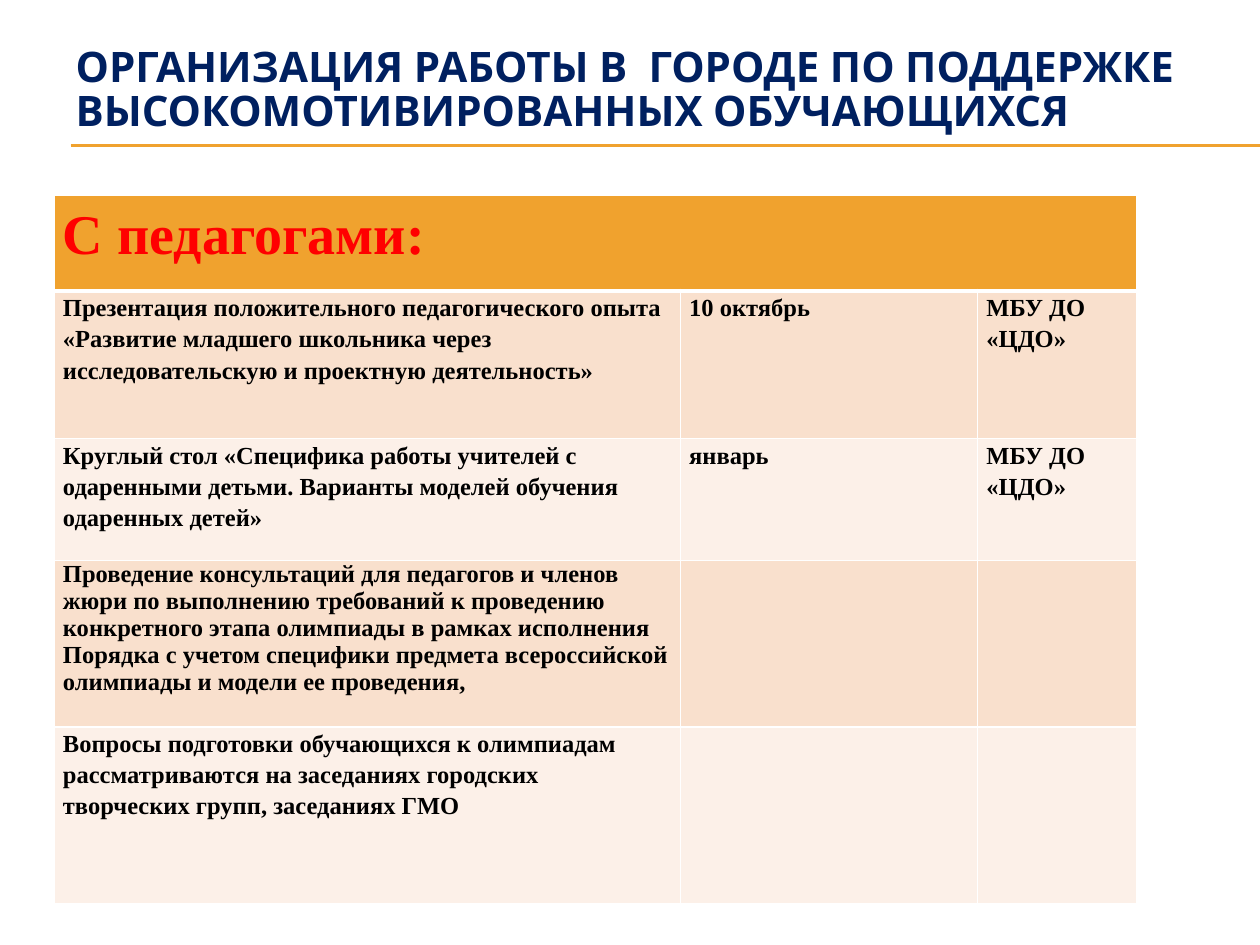
from lxml import etree
from pptx import Presentation
from pptx.dml.color import RGBColor
from pptx.enum.text import MSO_ANCHOR, MSO_AUTO_SIZE, PP_ALIGN
from pptx.oxml import parse_xml
from pptx.oxml.ns import nsdecls, qn
from pptx.util import Inches, Pt

NAVY, ORANGE, RED, BLACK, WHITE = "002060", "F0A22E", "FF0000", "000000", "FFFFFF"
BANDS = ("F9E0CD", "FCF0E8")
COLUMN_WIDTHS = (4.97, 2.36, 1.26)
ROW_HEIGHTS = (0.76, 1.17, 0.97, 1.32, 1.4)
TITLE = "ОРГАНИЗАЦИЯ РАБОТЫ В  ГОРОДЕ ПО ПОДДЕРЖКЕ ВЫСОКОМОТИВИРОВАННЫХ ОБУЧАЮЩИХСЯ"
HEADING = "С педагогами:"
EVENTS = (
    ("Презентация положительного педагогического опыта «Развитие младшего школьника "
     "через исследовательскую и проектную деятельность»", "10 октябрь", "МБУ ДО «ЦДО»", 1.15),
    ("Круглый стол «Специфика работы учителей с одаренными детьми. Варианты моделей "
     "обучения одаренных детей»", "январь", "МБУ ДО «ЦДО»", 1.15),
    ("Проведение консультаций для педагогов и членов жюри по выполнению требований к "
     "проведению конкретного этапа олимпиады в рамках исполнения Порядка с учетом "
     "специфики предмета всероссийской олимпиады и модели ее проведения,", "", "", 1.0),
    ("Вопросы подготовки обучающихся к олимпиадам рассматриваются на заседаниях "
     "городских творческих групп, заседаниях ГМО", "", "", 1.15),
)


def color(hex_value):
    """Turn a hex string into a colour."""
    return RGBColor.from_string(hex_value)


def style(paragraph, face, size, ink, spacing):
    """Format a bold, left-aligned paragraph."""
    font = paragraph.font
    font.name, font.size, font.bold = face, Pt(size), True
    font.color.rgb = color(ink)
    paragraph.line_spacing = spacing
    paragraph.alignment = PP_ALIGN.LEFT


def add_title(slide):
    """Fill and place the title placeholder."""
    title = slide.shapes.title
    title.left, title.top = Inches(0.5), Inches(0.3)
    title.width, title.height = Inches(9), Inches(0.85)
    frame = title.text_frame
    frame.text = TITLE
    frame.word_wrap = True
    frame.auto_size = MSO_AUTO_SIZE.NONE
    frame.vertical_anchor = MSO_ANCHOR.MIDDLE
    style(frame.paragraphs[0], "Karla", 24, NAVY, 0.88)


def add_rule(slide, y):
    """Draw a horizontal rule running to the right edge."""
    rule = slide.shapes.add_connector(1, Inches(0.56), Inches(y), Inches(10), Inches(y))
    rule.line.color.rgb = color(ORANGE)
    rule.line.width = Pt(0.75)
    etree.SubElement(rule._element.spPr, qn("a:effectLst"))


def set_borders(cell, bottom):
    """Give a cell white borders with its own bottom width."""
    properties = cell._tc.get_or_add_tcPr()
    for index, (side, width) in enumerate(zip("LRTB", (1, 1, 1, bottom))):
        properties.insert(index, parse_xml(
            f'<a:ln{side} {nsdecls("a")} w="{Pt(width)}"><a:solidFill>'
            f'<a:srgbClr val="{WHITE}"/></a:solidFill></a:ln{side}>'))


def fill_cell(cell, text, fill, size=14, ink=BLACK, spacing=1.15, bottom=1):
    """Write and format one table cell."""
    cell.margin_left = cell.margin_right = Inches(0.07)
    cell.margin_top = cell.margin_bottom = 0
    cell.fill.solid()
    cell.fill.fore_color.rgb = color(fill)
    set_borders(cell, bottom)
    cell.text = text
    style(cell.text_frame.paragraphs[0], "Times New Roman", size, ink, spacing)


def add_schedule(slide):
    """Build the table of events under its merged heading."""
    schedule = slide.shapes.add_table(
        len(ROW_HEIGHTS), len(COLUMN_WIDTHS), Inches(0.43), Inches(1.55),
        Inches(sum(COLUMN_WIDTHS)), Inches(sum(ROW_HEIGHTS))).table
    for column, width in zip(schedule.columns, COLUMN_WIDTHS):
        column.width = Inches(width)
    for row, height in zip(schedule.rows, ROW_HEIGHTS):
        row.height = Inches(height)
    last = len(COLUMN_WIDTHS) - 1
    schedule.cell(0, 0).merge(schedule.cell(0, last))
    for column in range(last + 1):
        fill_cell(schedule.cell(0, column), "" if column else HEADING, ORANGE,
                  size=32, ink=RED, bottom=3)
    for row, (*texts, spacing) in enumerate(EVENTS, start=1):
        for column, text in enumerate(texts):
            fill_cell(schedule.cell(row, column), text, BANDS[(row - 1) % 2], spacing=spacing)


def main():
    """Build and save the slide."""
    deck = Presentation()
    deck.slide_width, deck.slide_height = Inches(10), Inches(7.5)
    slide = deck.slides.add_slide(deck.slide_layouts[5])
    for y in (1.15, 1.16):
        add_rule(slide, y)
    add_title(slide)
    add_schedule(slide)
    deck.save("out.pptx")


if __name__ == "__main__":
    main()
